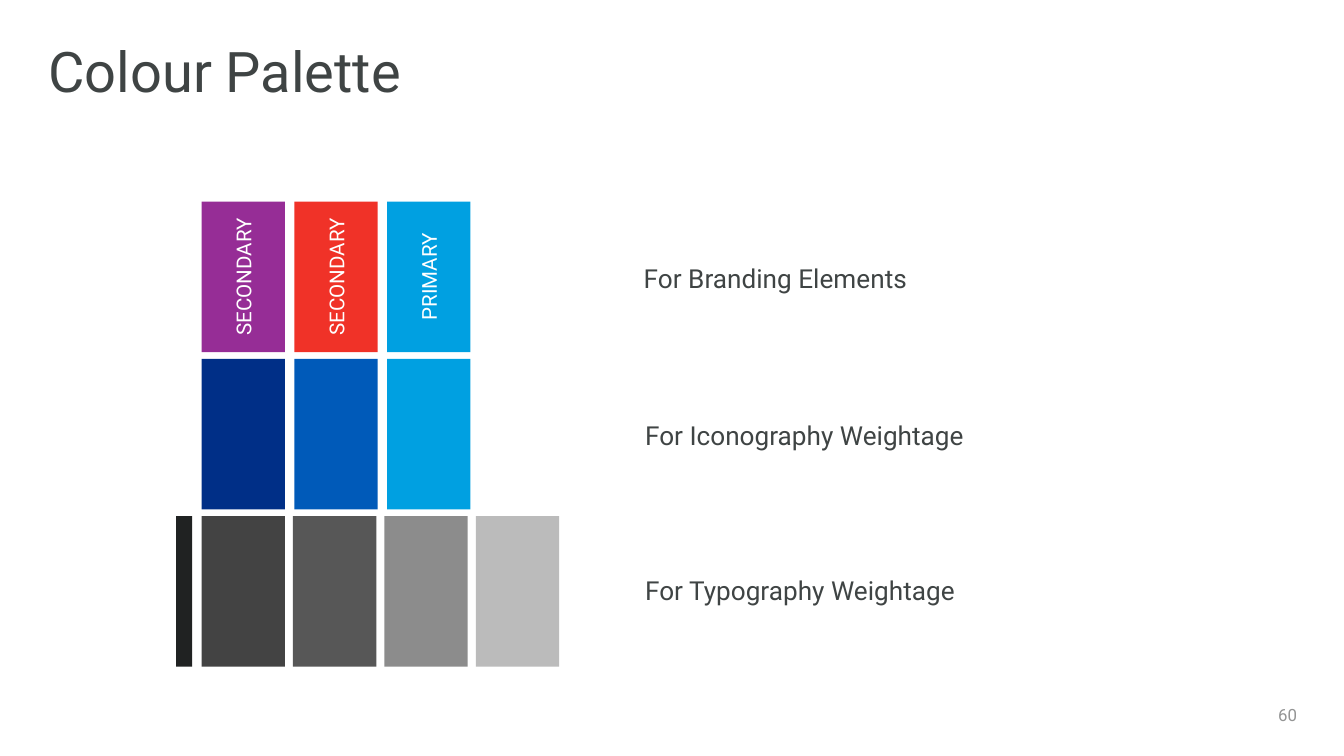
from dataclasses import dataclass

from pptx import Presentation
from pptx.dml.color import RGBColor
from pptx.enum.shapes import MSO_SHAPE
from pptx.enum.text import MSO_ANCHOR, MSO_AUTO_SIZE, PP_ALIGN
from pptx.slide import Slide
from pptx.text.text import TextFrame
from pptx.util import Inches, Pt


@dataclass(frozen=True)
class Theme:
    font: str = "Roboto"
    ink: str = "3F4444"
    page_ink: str = "939494"
    swatch_ink: str = "FFFFFF"
    title_size: int = 30
    caption_size: int = 14
    swatch_size: int = 11
    page_size: int = 9


@dataclass(frozen=True)
class Swatch:
    color: str
    role: str = ""


@dataclass(frozen=True)
class PaletteRow:
    caption: str
    caption_left: float
    caption_top: float
    column_step: float
    swatches: tuple[Swatch, ...]


THEME = Theme()
GRID_LEFT, GRID_TOP = 1.5, 1.5
SWATCH_WIDTH, SWATCH_HEIGHT = 0.62, 1.12
ROW_STEP = 1.17
ACCENT_LEFT, ACCENT_WIDTH, ACCENT_COLOR = 1.31, 0.12, "202222"

ROWS = (
    PaletteRow("For Branding Elements", 4.72, 1.91, 0.69, (
        Swatch("962D96", "SECONDARY"),
        Swatch("F03228", "SECONDARY"),
        Swatch("00A0E1", "PRIMARY"),
    )),
    PaletteRow("For Iconography Weightage", 4.73, 3.08, 0.69, (
        Swatch("002F87"), Swatch("005AB9"), Swatch("00A0E1"),
    )),
    PaletteRow("For Typography Weightage", 4.73, 4.23, 0.68, (
        Swatch("434343"), Swatch("575757"), Swatch("8C8C8C"), Swatch("BBBBBB"),
    )),
)


def write(frame: TextFrame, text: str, *, size: int, color: str = THEME.ink,
          align: PP_ALIGN = PP_ALIGN.LEFT, anchor: MSO_ANCHOR = MSO_ANCHOR.MIDDLE,
          line_spacing: float = 1.0, upward: bool = False,
          auto_size: MSO_AUTO_SIZE = MSO_AUTO_SIZE.NONE) -> None:
    """Fill a frame with one formatted paragraph; upward turns it to read bottom to top."""
    frame.margin_left = frame.margin_right = Inches(0.07)
    frame.margin_top = frame.margin_bottom = Inches(0.04)
    frame.word_wrap = True
    frame.auto_size = auto_size
    frame.vertical_anchor = anchor
    if upward:
        frame._txBody.bodyPr.set("vert", "vert270")
    paragraph = frame.paragraphs[0]
    paragraph.alignment = align
    paragraph.line_spacing = line_spacing
    run = paragraph.add_run()
    run.text = text
    run.font.name = THEME.font
    run.font.size = Pt(size)
    run.font.color.rgb = RGBColor.from_string(color)


def add_text_box(slide: Slide, left: float, top: float, width: float,
                 height: float) -> TextFrame:
    return slide.shapes.add_textbox(
        Inches(left), Inches(top), Inches(width), Inches(height)).text_frame


def draw_swatch(slide: Slide, swatch: Swatch, left: float, top: float,
                width: float = SWATCH_WIDTH) -> None:
    block = slide.shapes.add_shape(
        MSO_SHAPE.RECTANGLE, Inches(left), Inches(top), Inches(width), Inches(SWATCH_HEIGHT))
    block.shadow.inherit = False
    block.fill.solid()
    block.fill.fore_color.rgb = RGBColor.from_string(swatch.color)
    block.line.fill.background()
    if swatch.role:
        write(block.text_frame, swatch.role, size=THEME.swatch_size,
              color=THEME.swatch_ink, align=PP_ALIGN.CENTER, upward=True)


def draw_row(slide: Slide, row: PaletteRow, top: float) -> None:
    for column, swatch in enumerate(row.swatches):
        draw_swatch(slide, swatch, GRID_LEFT + column * row.column_step, top)
    caption = add_text_box(slide, row.caption_left, row.caption_top, 3, 0.31)
    write(caption, row.caption, size=THEME.caption_size, anchor=MSO_ANCHOR.TOP,
          auto_size=MSO_AUTO_SIZE.SHAPE_TO_FIT_TEXT)


def draw_title(slide: Slide, text: str) -> None:
    title = slide.shapes.title
    title.left, title.top = Inches(0.29), Inches(0.22)
    title.width, title.height = Inches(7.07), Inches(0.67)
    write(title.text_frame, text, size=THEME.title_size, line_spacing=0.9)


def main() -> None:
    deck = Presentation()
    deck.slide_width = Inches(10)
    deck.slide_height = deck.slide_width * 9 // 16
    slide = deck.slides.add_slide(deck.slide_layouts[5])

    draw_title(slide, "Colour Palette")
    for index, row in enumerate(ROWS):
        draw_row(slide, row, GRID_TOP + index * ROW_STEP)
    last_row_top = GRID_TOP + (len(ROWS) - 1) * ROW_STEP
    draw_swatch(slide, Swatch(ACCENT_COLOR), ACCENT_LEFT, last_row_top, ACCENT_WIDTH)
    write(add_text_box(slide, 8.83, 5.17, 0.89, 0.3), "60",
          size=THEME.page_size, color=THEME.page_ink, align=PP_ALIGN.RIGHT)

    deck.save("out.pptx")


if __name__ == "__main__":
    main()
